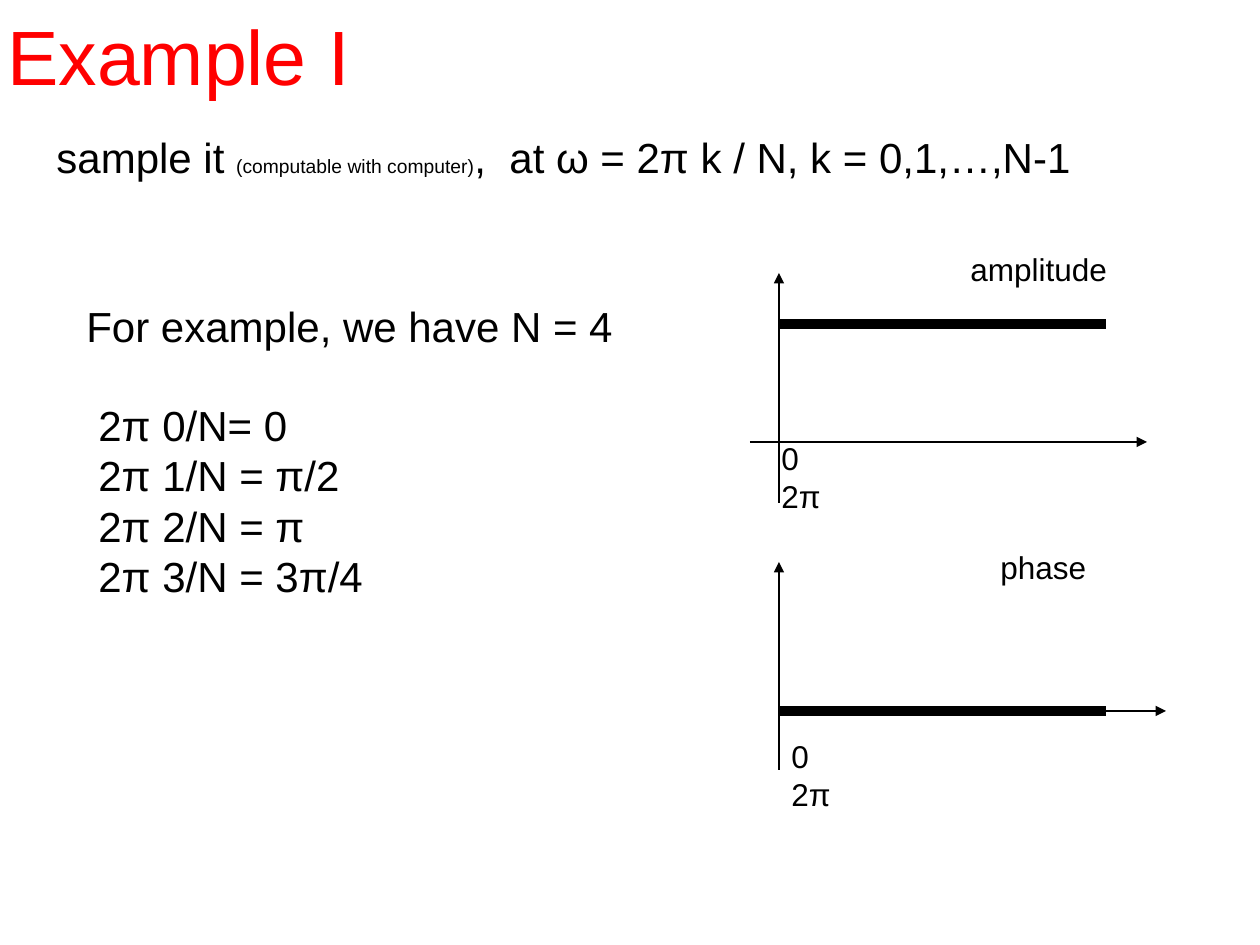
from lxml import etree
from pptx import Presentation
from pptx.dml.color import RGBColor
from pptx.enum.shapes import MSO_CONNECTOR
from pptx.enum.text import MSO_ANCHOR
from pptx.oxml.ns import qn
from pptx.util import Emu, Pt

PX = 914400 // 126
BLACK = RGBColor(0, 0, 0)
RED = RGBColor(255, 0, 0)
STRAIGHT = MSO_CONNECTOR.STRAIGHT
TOP = MSO_ANCHOR.TOP
MIDDLE = MSO_ANCHOR.MIDDLE

deck = Presentation()
deck.slide_width = Emu(1260 * PX)
deck.slide_height = Emu(945 * PX)
page = deck.slides.add_slide(deck.slide_layouts[6])


def add_text(text, left, top, width, height, size=18, color=BLACK, anchor=TOP):
    """Add a text box; text is a list of paragraphs, each a list of (words, size or None)."""
    box = page.shapes.add_textbox(*(Emu(n * PX) for n in (left, top, width, height)))
    frame = box.text_frame
    frame.word_wrap = True
    frame.vertical_anchor = anchor
    for index, spans in enumerate(text):
        para = frame.paragraphs[0] if index == 0 else frame.add_paragraph()
        for words, span_size in spans:
            span = para.add_run()
            span.text = words
            span.font.name = "Arial"
            span.font.size = Pt(span_size or size)
            span.font.color.rgb = color
    return frame


def add_line(start, end, weight=0.75, arrow=False):
    line = page.shapes.add_connector(STRAIGHT, *(Emu(n * PX) for n in (*start, *end)))
    line.line.color.rgb = BLACK
    line.line.width = Pt(weight)
    if arrow:
        etree.SubElement(line.line._get_or_add_ln(), qn("a:tailEnd"), type="triangle")
    etree.SubElement(line._element.spPr, qn("a:effectLst"))


add_text([[("Example I", None)]], -5, -24, 1134, 158, size=44, color=RED, anchor=MIDDLE)
add_text(
    [[("sample it ", None), ("(computable with computer)", 11),
      (",  at ω = 2π k / N, k = 0,1,…,N-1", None)]],
    44, 125, 1142, 190, size=24)

# Each plot: name and its place, axis ends, level of the curve, place of the scale
ORIGIN_X = 779
CURVE_END = 1106
plots = [
    ("amplitude", (958, 244, 164), (750, 1147), 442, (503, 273), 324, (769, 433, 377)),
    ("phase", (988, 542, 112), (779, 1166), 711, (770, 562), 711, (779, 731, 363)),
]
for name, name_at, (x_start, x_end), axis_y, (y_start, y_end), level, scale_at in plots:
    add_line((x_start, axis_y), (x_end, axis_y), arrow=True)
    add_line((ORIGIN_X, y_start), (ORIGIN_X, y_end), arrow=True)
    add_line((ORIGIN_X, level), (CURVE_END, level), weight=6)
    add_text([[(name, None)]], *name_at, 50)
    add_text([[("0", None)], [("2π", None)]], *scale_at, 88)

steps = ["2π 0/N= 0", "2π 1/N = π/2", "2π 2/N = π", "2π 3/N = 3π/4"]
example = add_text(
    [[(words, None)] for words in ["For example, we have N = 4", *steps]],
    74, 294, 557, 394, size=24)
for para in example.paragraphs[1:]:
    para._p.get_or_add_pPr().set("marL", str(12 * PX))
example.paragraphs[1].space_before = Pt(28)

deck.save("out.pptx")
